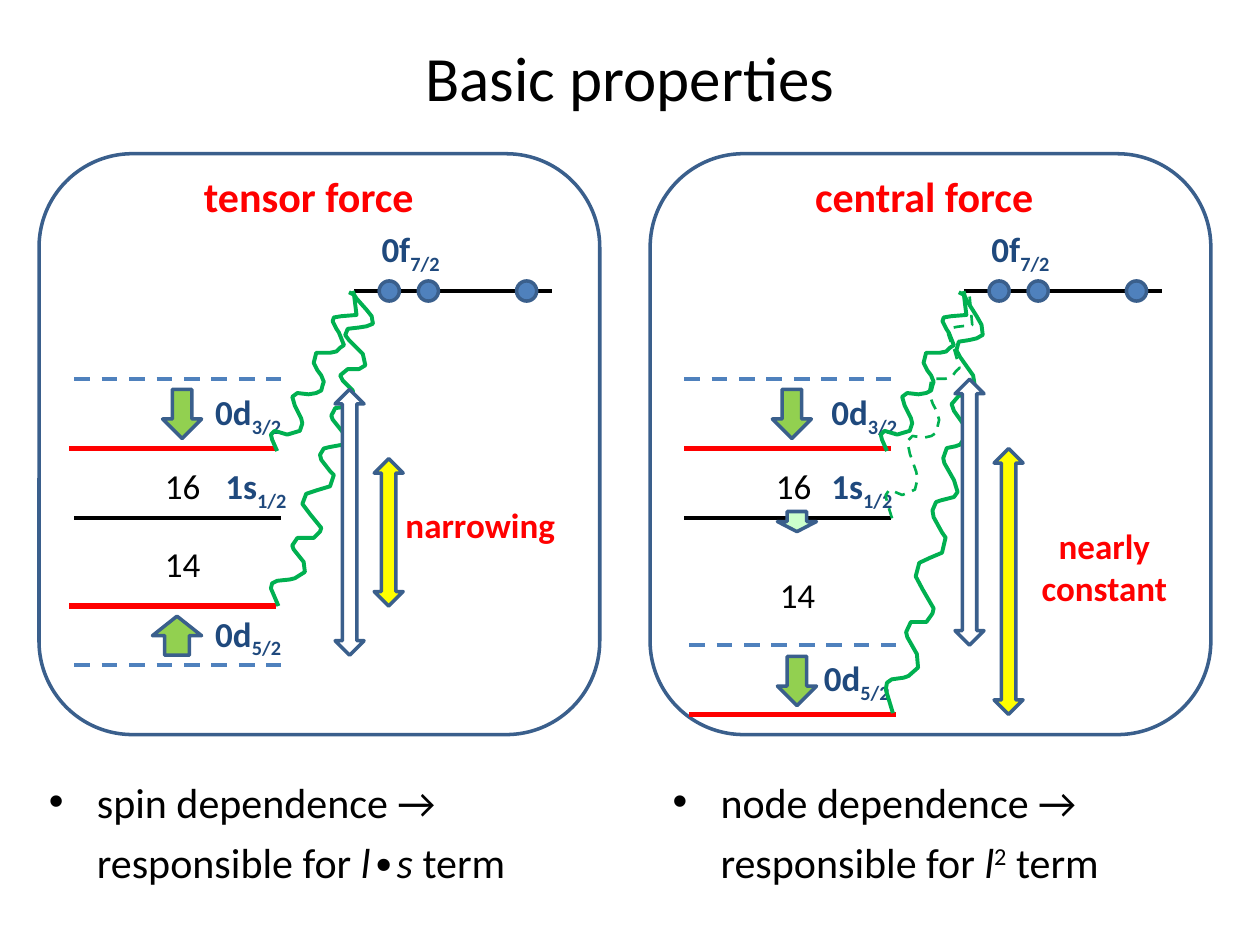
from lxml import etree
from pptx import Presentation, util as u
from pptx.dml.color import RGBColor
from pptx.enum import dml, shapes, text
from pptx.oxml import ns

PX = 9144  # 100 px to the inch
COLORS = {"black": "000000", "red": "FF0000", "navy": "1F497D", "blue": "4F81BD",
          "edge": "3A5F8C", "lime": "92D050", "mint": "CCFFCC", "green": "00B050",
          "yellow": "FFFF00", "white": "FFFFFF"}
KIND = shapes.MSO_SHAPE

presentation = Presentation()
presentation.slide_width, presentation.slide_height = 1000 * PX, 750 * PX
slide = presentation.slides.add_slide(presentation.slide_layouts[6])


def style(shape, fill, line="edge", width=2.0, dashed=False):
    """Fill and outline a shape; a connector has no fill of its own."""
    if shape.shape_type == shapes.MSO_SHAPE_TYPE.LINE:
        etree.SubElement(shape._element.spPr, ns.qn("a:effectLst"))
    else:
        shape.shadow.inherit = False
        if fill:
            shape.fill.solid()
            shape.fill.fore_color.rgb = RGBColor.from_string(COLORS[fill])
        else:
            shape.fill.background()
    shape.line.color.rgb = RGBColor.from_string(COLORS[line])
    shape.line.width = u.Pt(width)
    if dashed:
        shape.line.dash_style = dml.MSO_LINE.DASH


def write(box, paragraphs, size, color="black", bold=False, align=None, wrap=False):
    """Add a text box; each paragraph is a list of (text, italic, baseline) runs."""
    frame = slide.shapes.add_textbox(*[n * PX for n in box]).text_frame
    frame.word_wrap = wrap
    for index, runs in enumerate(paragraphs):
        paragraph = frame.add_paragraph() if index else frame.paragraphs[0]
        paragraph.alignment = align
        for words, italic, baseline in runs:
            run = paragraph.add_run()
            run.text = words
            run.font.name, run.font.size = "Calibri", u.Pt(size)
            run.font.bold, run.font.italic = bold, italic
            run.font.color.rgb = RGBColor.from_string(COLORS[color])
            if baseline:
                run.font._element.set("baseline", str(baseline * 1000))
    return frame


# Title
title = write((12, 21, 976, 79), [[("Basic properties", False, 0)]], 36,
              align=text.PP_ALIGN.CENTER, wrap=True)
title.vertical_anchor = text.MSO_ANCHOR.MIDDLE

# Panel frames and headings
for left, heading, width in ((31, "tensor force", 215), (516, "central force", 222)):
    frame = slide.shapes.add_shape(KIND.ROUNDED_RECTANGLE, left * PX, 122 * PX,
                                   445 * PX, 461 * PX)
    style(frame, None)
    write((left + 121, 130, width, 51), [[(heading, False, 0)]], 24, "red", True)

# Energy levels: x, y, length, colour, width, dashed
PANELS = (0, 484)  # x offset of each level scheme
levels = [(59, 528, 164, "blue", 2.25, True), (55, 356, 164, "red", 3, False),
          (55, 481, 164, "red", 3, False), (547, 512, 164, "blue", 2.25, True),
          (543, 356, 164, "red", 3, False), (547, 567, 164, "red", 3, False)]
for dx in PANELS:
    levels += [(281 + dx, 231, 157, "black", 2.25, False),
               (59 + dx, 411, 164, "black", 2.25, False),
               (59 + dx, 301, 164, "blue", 2.25, True)]
for x, y, length, color, width, dashed in levels:
    level = slide.shapes.add_connector(shapes.MSO_CONNECTOR.STRAIGHT, x * PX, y * PX,
                                       (x + length) * PX, y * PX)
    style(level, None, color, width, dashed)

# Orbit names with subscripts
orbits = [(161, 305, 76, "0d", "3/2"), (161, 481, 76, "0d", "5/2"),
          (169, 364, 73, "1s", "1/2"), (293, 176, 70, "0f", "7/2"),
          (650, 305, 76, "0d", "3/2"), (644, 516, 76, "0d", "5/2"),
          (650, 364, 73, "1s", "1/2"), (777, 176, 70, "0f", "7/2")]
for x, y, width, orbit, spin in orbits:
    write((x, y, width, 44), [[(orbit, False, 0), (spin, False, -25)]], 20, "navy", True)

# Shell gap numbers
for x, y, number in ((121, 364, "16"), (121, 426, "14"), (606, 364, "16"), (609, 450, "14")):
    write((x, y, 49, 44), [[(number, False, 0)]], 20)

# Wavy interaction lines, as points within their own box
SHORT_WAVE = [(5, 127), (1, 118), (0, 114), (3, 111), (13, 114), (23, 111), (25, 105),
              (24, 101), (19, 91), (17, 84), (21, 81), (30, 82), (36, 81), (40, 79),
              (41, 75), (42, 72), (40, 67), (37, 63), (34, 57), (36, 49), (47, 49),
              (52, 48), (55, 45), (58, 43), (54, 33), (52, 30), (49, 24), (50, 21),
              (56, 20), (68, 19), (66, 3), (62, 1)]
LONG_WAVE = [(6, 250), (0, 236), (1, 232), (5, 230), (15, 229), (19, 228), (27, 223),
             (26, 215), (18, 205), (17, 202), (21, 196), (34, 196), (39, 191), (40, 188),
             (31, 177), (25, 169), (28, 161), (37, 158), (47, 155), (50, 146), (47, 143),
             (40, 134), (39, 130), (42, 125), (46, 124), (57, 122), (60, 119), (57, 112),
             (49, 102), (48, 99), (51, 93), (58, 92), (62, 91), (66, 87), (65, 79),
             (57, 71), (55, 67), (61, 62), (70, 62), (75, 59), (73, 50), (62, 39),
             (59, 35), (61, 30), (70, 29), (76, 28), (81, 26), (80, 20), (76, 15),
             (68, 6), (66, 3), (65, 0)]
WAVES = [(SHORT_WAVE, 215, 1, 1, 2.25, False), (LONG_WAVE, 215, 1, 1, 2.25, False),
         (SHORT_WAVE, 699, 1, 1, 2.25, False), (LONG_WAVE, 703, 0.95, 1.34, 2.25, False),
         (SHORT_WAVE, 703, 1.01, 1.42, 1.5, True)]
for wave, left, stretch_x, stretch_y, width, dashed in WAVES:
    points = [(round((left + x * stretch_x) * PX), round((231 + y * stretch_y) * PX))
              for x, y in wave]
    builder = slide.shapes.build_freeform(*points[0])
    builder.add_line_segments(points[1:], close=False)
    style(builder.convert_to_shape(), None, "green", width, dashed)

# Nucleons, shift arrows and gap arrows
marks = [(KIND.OVAL, x + dx, 223, 16, 16, "blue") for dx in PANELS for x in (301, 332, 410)]
marks += [(KIND.DOWN_ARROW, 129, 309, 31, 39, "lime"),
          (KIND.UP_ARROW, 121, 489, 39, 31, "lime"),
          (KIND.DOWN_ARROW, 613, 309, 31, 39, "lime"),
          (KIND.DOWN_ARROW, 617, 521, 31, 39, "lime"),
          (KIND.DOWN_ARROW, 617, 406, 31, 16, "mint"),
          (KIND.UP_DOWN_ARROW, 297, 364, 23, 117, "yellow"),
          (KIND.UP_DOWN_ARROW, 266, 309, 23, 211, "white"),
          (KIND.UP_DOWN_ARROW, 789, 356, 23, 211, "yellow"),
          (KIND.UP_DOWN_ARROW, 758, 301, 23, 211, "white")]
for kind, x, y, width, height, fill in marks:
    style(slide.shapes.add_shape(kind, x * PX, y * PX, width * PX, height * PX), fill)

# Gap trends
write((312, 395, 156, 44), [[("narrowing", False, 0)]], 20, "red", True)
write((808, 411, 137, 77), [[("nearly", False, 0)], [("constant", False, 0)]], 20,
      "red", True, text.PP_ALIGN.CENTER)

# Bulleted conclusions
conclusions = [
    (29, [("spin dependence → responsible for ", False, 0), ("l∙s", True, 0),
          (" term", False, 0)]),
    (524, [("node dependence → responsible for ", False, 0), ("l", True, 0),
           ("2", False, 30), (" term", False, 0)])]
for x, runs in conclusions:
    paragraph = write((x, 603, 441, 115), [runs], 24, wrap=True).paragraphs[0]
    paragraph.line_spacing = 1.2
    properties = paragraph._p.get_or_add_pPr()
    properties.set("marL", str(38 * PX))
    properties.set("indent", str(-38 * PX))
    etree.SubElement(properties, ns.qn("a:buFont"), typeface="Arial")
    etree.SubElement(properties, ns.qn("a:buChar"), char="•")

presentation.save("out.pptx")
